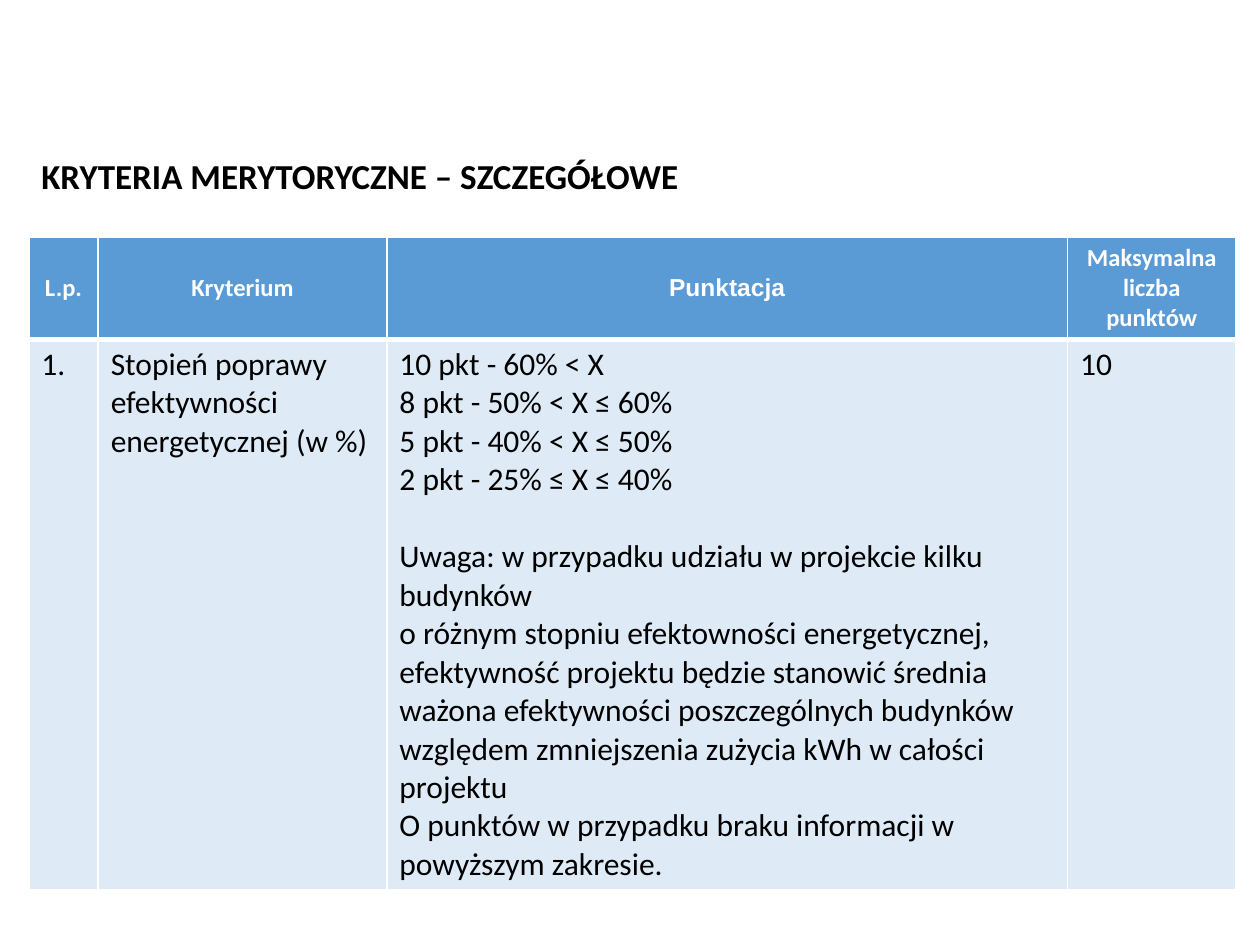
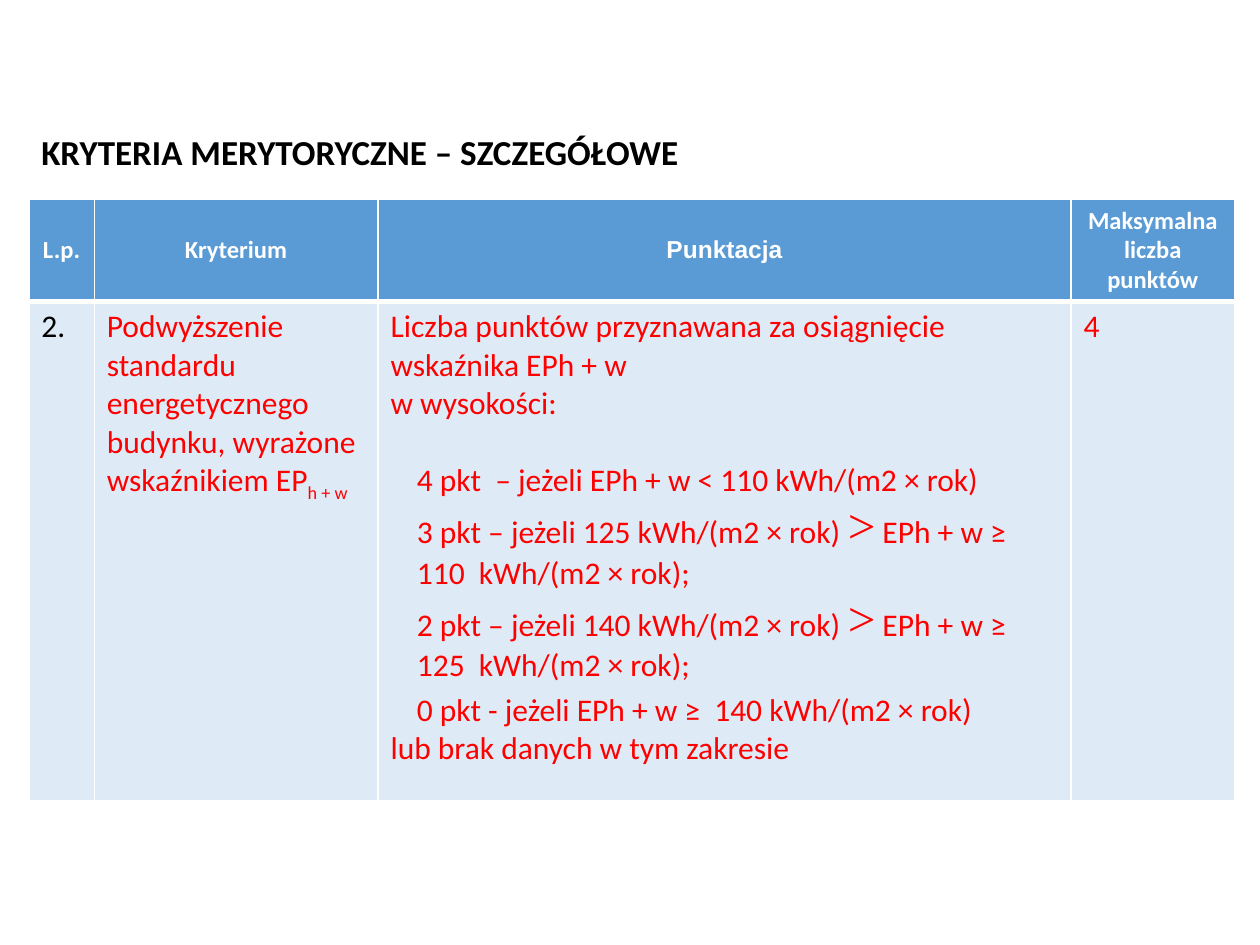
from dataclasses import dataclass

from lxml.etree import SubElement
from pptx import Presentation
from pptx.dml.color import RGBColor
from pptx.enum.text import MSO_ANCHOR as Anchor, MSO_AUTO_SIZE as AutoSize, PP_ALIGN as Align
from pptx.oxml.ns import qn
from pptx.util import Cm, Pt

BLACK, WHITE, RED = "000000", "FFFFFF", "FF0000"
HEADER_BLUE, BODY_BLUE = "5B9BD5", "DEEBF7"
FONT = "Calibri"
TITLE = "KRYTERIA MERYTORYCZNE – SZCZEGÓŁOWE"
HEADERS = [("L.p.", FONT), ("Kryterium", FONT), ("Punktacja", "Arial"),
           ("Maksymalna liczba punktów", FONT)]
TITLE_ONLY = 5
LEFT = 0.58
HEADER_HEIGHT = 2.03
BLANK_LINE = 22


@dataclass
class Line:
    """One paragraph made of spans, with its spacing and indent."""
    spans: list
    indent: float = 0
    before: float = 0
    spacing: float = 1.0


@dataclass
class Criterion:
    """One criterion slide: positions in cm and the contents of the row."""
    title_top: float
    table_top: float
    widths: list
    body_height: float
    cells: list
    colors: list


def range_line(points, upper, lower):
    """Return the indented line for a score between two indicator values."""
    return Line([f"{points} pkt – jeżeli {upper} kWh/(m2 × rok) ", ">",
                 f" EPh + w ≥ {lower}\u00a0 kWh/(m2 × rok);"], indent=0.53)


CRITERIA = [
    Criterion(
        2.97, 4.78, [1.4, 5.82, 13.72, 3.4], 11.1,
        [[Line(["1."])],
         [Line(["Stopień poprawy efektywności energetycznej (w %)"])],
         [Line(["10 pkt - 60% < X"]),
          Line(["8 pkt - 50% < X ≤ 60%"]),
          Line(["5 pkt - 40% < X ≤ 50%"]),
          Line(["2 pkt - 25% ≤ X ≤ 40%"]),
          Line(["Uwaga: w przypadku udziału w projekcie kilku budynków\v"
                "o różnym stopniu efektowności energetycznej, efektywność projektu "
                "będzie stanowić średnia ważona efektywności poszczególnych budynków "
                "względem zmniejszenia zużycia kWh w całości projektu"],
               before=BLANK_LINE),
          Line(["O punktów w przypadku braku informacji w powyższym zakresie."])],
         [Line(["10"])]],
        [BLACK] * 4),
    Criterion(
        2.49, 4.02, [1.32, 5.72, 13.97, 3.3], 10.06,
        [[Line(["2."])],
         [Line(["Podwyższenie standardu energetycznego budynku, "
                "wyrażone wskaźnikiem EP", "h + w"])],
         [Line(["Liczba punktów przyznawana za osiągnięcie wskaźnika EPh + w\v"
                "w wysokości:"]),
          Line(["4 pkt\u00a0 – jeżeli EPh + w < 110 kWh/(m2 × rok)"],
               indent=0.53, before=BLANK_LINE),
          range_line(3, 125, 110),
          range_line(2, 140, 125),
          Line(["0 pkt - jeżeli EPh + w ≥ \u00a0140 kWh/(m2 × rok)"],
               indent=0.53, spacing=1.15),
          Line(["lub brak danych w tym zakresie"])],
         [Line(["4"])]],
        [BLACK, RED, RED, RED]),
]


def rgb(value):
    """Turn a hex string into a colour."""
    return RGBColor.from_string(value)


def style_font(font, size, color, bold=False, name=FONT):
    """Set the size, colour, weight and typeface of a font."""
    font.size, font.bold, font.name = Pt(size), bold, name
    font.color.rgb = rgb(color)


def style_cell(cell, fill, top=1, bottom=1):
    """Give a cell white borders and a solid fill."""
    properties = cell._tc.get_or_add_tcPr()
    for side, width in (("L", 1), ("R", 1), ("T", top), ("B", bottom)):
        border = SubElement(properties, qn(f"a:ln{side}"), w=str(Pt(width)))
        paint = SubElement(border, qn("a:solidFill"))
        SubElement(paint, qn("a:srgbClr"), val=WHITE)
    cell.fill.solid()
    cell.fill.fore_color.rgb = rgb(fill)


def write_line(para, line, color):
    """Write one line and format its spans, subscripts and large signs."""
    para.text = line.spans[0]
    for text in line.spans[1:]:
        para.add_run().text = text
    para.line_spacing = line.spacing
    if line.before:
        para.space_before = Pt(line.before)
    if line.indent:
        para._p.get_or_add_pPr().set("marL", str(Cm(line.indent)))
    for span in para.runs:
        style_font(span.font, 18, color)
        if span.text == ">":
            style_font(span.font, 28, color, name="Times New Roman")
        elif span.text == "h + w":
            span.font._element.set("baseline", "-25000")


def add_title(page, top):
    """Place and format the slide title."""
    box = page.shapes.title
    box.left, box.top, box.width, box.height = Cm(LEFT), Cm(top), Cm(13.77), Cm(1.12)
    frame = box.text_frame
    frame.text = TITLE
    frame.word_wrap = False
    frame.auto_size = AutoSize.NONE
    frame.vertical_anchor = Anchor.MIDDLE
    para = frame.paragraphs[0]
    para.alignment = Align.LEFT
    style_font(para.runs[0].font, 20, BLACK, bold=True)


def add_criterion_table(page, criterion):
    """Add the table with its header row and one criterion row."""
    height = HEADER_HEIGHT + criterion.body_height
    table = page.shapes.add_table(2, len(HEADERS), Cm(LEFT), Cm(criterion.table_top),
                                  Cm(sum(criterion.widths)), Cm(height)).table
    table.rows[0].height = Cm(HEADER_HEIGHT)
    table.rows[1].height = Cm(criterion.body_height)
    for index, (label, font_name) in enumerate(HEADERS):
        table.columns[index].width = Cm(criterion.widths[index])
        header = table.cell(0, index)
        header.text_frame.text = label
        header.vertical_anchor = Anchor.MIDDLE
        para = header.text_frame.paragraphs[0]
        para.alignment = Align.CENTER
        style_font(para.runs[0].font, 14, WHITE, bold=True, name=font_name)
        style_cell(header, HEADER_BLUE, bottom=3)

        body = table.cell(1, index)
        style_cell(body, BODY_BLUE, top=3)
        for number, line in enumerate(criterion.cells[index]):
            frame = body.text_frame
            para = frame.add_paragraph() if number else frame.paragraphs[0]
            write_line(para, line, criterion.colors[index])


def main():
    """Build the deck and save it."""
    deck = Presentation()
    deck.slide_width, deck.slide_height = Cm(25.4), Cm(19.05)
    for criterion in CRITERIA:
        page = deck.slides.add_slide(deck.slide_layouts[TITLE_ONLY])
        add_title(page, criterion.title_top)
        add_criterion_table(page, criterion)
    deck.save("out.pptx")


if __name__ == "__main__":
    main()
